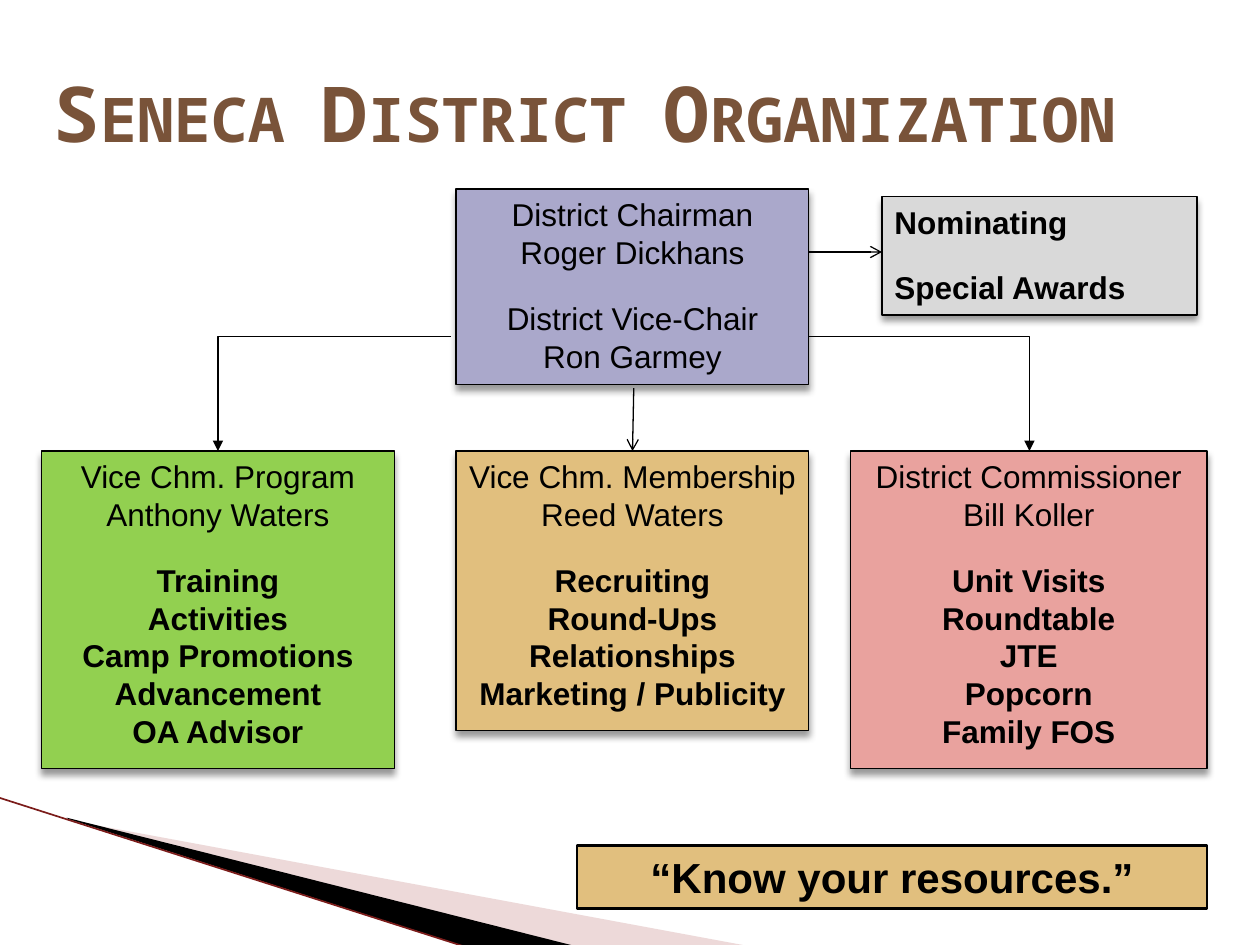
from lxml import etree
from pptx import Presentation
from pptx import util as u
from pptx.dml.color import RGBColor
from pptx.enum import shapes, text
from pptx.oxml.ns import qn

PX = 9144  # EMU in one px, 100 px to the inch
GAP = 16   # points between groups of lines
TAN = "E1BF7E"


def px(*nums):
    return [u.Emu(n * PX) for n in nums]


def rgb(code):
    return RGBColor.from_string(code)


def sub(node, tag, **attrs):
    return etree.SubElement(node, qn(tag), **attrs)


def ink(run, size, face="Arial", color="000000", bold=False):
    font = run.font
    font.size, font.name, font.bold = u.Pt(size), face, bold
    font.color.rgb = rgb(color)


def outline(shape, color="000000", width=0.75):
    shape.line.color.rgb = rgb(color)
    shape.line.width = u.Pt(width)


def shade(shape):
    """Give the shape a soft shadow straight below it."""
    effects = shape._element.spPr.find(qn("a:effectLst"))
    drop = sub(effects, "a:outerShdw", blurRad=str(u.Pt(4)),
               dist=str(u.Pt(3)), dir="5400000", rotWithShape="0")
    sub(sub(drop, "a:srgbClr", val="000000"), "a:alpha", val="40000")


def box(slide, place, fill, groups, size=18, width=0.75, shadow=True,
        align=text.PP_ALIGN.CENTER):
    """Draw a filled box; groups are (bold, lines) pairs set apart by a gap."""
    shape = slide.shapes.add_shape(shapes.MSO_SHAPE.RECTANGLE, *px(*place))
    shape.fill.solid()
    shape.fill.fore_color.rgb = rgb(fill)
    outline(shape, width=width)
    shape.shadow.inherit = False
    if shadow:
        shade(shape)
    frame = shape.text_frame
    frame.word_wrap = True
    frame.auto_size = text.MSO_AUTO_SIZE.SHAPE_TO_FIT_TEXT
    frame.vertical_anchor = text.MSO_ANCHOR.TOP
    frame.text = "\n".join(line for _, lines in groups for line in lines)
    paras = iter(frame.paragraphs)
    for g, (bold, lines) in enumerate(groups):
        for n in range(len(lines)):
            para = next(paras)
            para.alignment = align
            if g and n == 0:
                para.space_before = u.Pt(GAP)
            ink(para.runs[0], size, bold=bold)


def link(slide, ends, head=None, bent=False, color="000000", width=0.75):
    """Join two points; a bent link runs across, then down."""
    kind = shapes.MSO_CONNECTOR.ELBOW if bent else shapes.MSO_CONNECTOR.STRAIGHT
    line = slide.shapes.add_connector(kind, *px(*ends))
    outline(line, color, width)
    props = line._element.spPr
    if bent:
        props.find(qn("a:prstGeom")).set("prst", "bentConnector2")
    if head:
        sub(line.line._get_or_add_ln(), "a:tailEnd", type=head)
    sub(props, "a:effectLst")


def wedge(slide, points, fill, alpha=100):
    start, *rest = points
    form = slide.shapes.build_freeform(*start, scale=PX)
    form.add_line_segments(rest, close=True)
    shape = form.convert_to_shape()
    shape.fill.solid()
    shape.fill.fore_color.rgb = rgb(fill)
    if alpha < 100:
        tint = shape._element.spPr.find(qn("a:solidFill"))[0]
        sub(tint, "a:alpha", val=str(alpha * 1000))
    shape.line.fill.background()
    shape.shadow.inherit = False


def title(slide, words):
    frame = slide.shapes.add_textbox(*px(33, 8, 950, 162)).text_frame
    frame.word_wrap = True
    frame.vertical_anchor = text.MSO_ANCHOR.MIDDLE
    frame.text = words
    run = frame.paragraphs[0].runs[0]
    ink(run, 44, "Noto Sans Mono", "795339", True)
    run.font._element.set("cap", "small")


def main():
    deck = Presentation()
    deck.slide_width, deck.slide_height = px(1000, 750)
    slide = deck.slides.add_slide(deck.slide_layouts[6])

    wedge(slide, [(55, 651), (595, 751), (456, 751), (55, 650)], "D2A1A0", 40)
    wedge(slide, [(53, 649), (457, 751), (372, 752), (54, 650)], "000000")
    link(slide, (-1, 633, 371, 752), color="7B1C1A", width=0.95)
    title(slide, "Seneca District Organization")

    teams = [
        (33, 280, 252, "92D050", ["Vice Chm. Program", "Anthony Waters"],
         ["Training", "Activities", "Camp Promotions", "Advancement",
          "OA Advisor"]),
        (362, 280, 222, TAN, ["Vice Chm. Membership", "Reed Waters"],
         ["Recruiting", "Round-Ups", "Relationships",
          "Marketing / Publicity"]),
        (675, 283, 252, "E9A29E", ["District Commissioner", "Bill Koller"],
         ["Unit Visits", "Roundtable", "JTE", "Popcorn", "Family FOS"]),
    ]
    for left, wide, high, fill, lead, tasks in teams:
        box(slide, (left, 358, wide, high), fill,
            [(False, lead), (True, tasks)])

    link(slide, (358, 267, 173, 358), "triangle", bent=True)
    link(slide, (642, 267, 817, 358), "triangle", bent=True)
    link(slide, (503, 308, 502, 358), "arrow")
    box(slide, (700, 156, 250, 94), "D9D9D9",
        [(True, ["Nominating"]), (True, ["Special Awards"])],
        align=text.PP_ALIGN.LEFT)
    link(slide, (642, 200, 700, 200), "arrow")
    box(slide, (458, 671, 500, 50), TAN, [(True, ["“Know your resources.”"])],
        size=24, width=1.5, shadow=False)
    box(slide, (362, 150, 280, 155), "AAA8CB",
        [(False, ["District Chairman", "Roger Dickhans"]),
         (False, ["District Vice-Chair", "Ron Garmey"])])

    deck.save("out.pptx")


if __name__ == "__main__":
    main()
